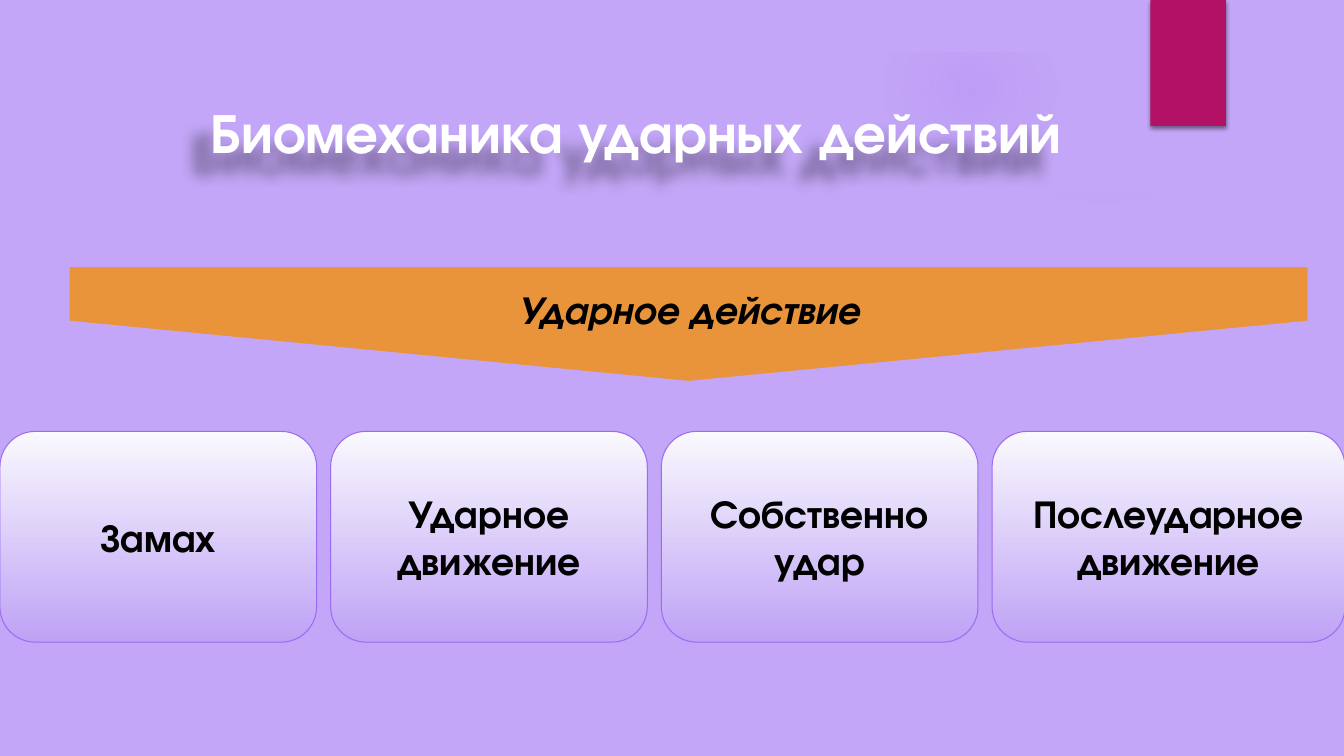
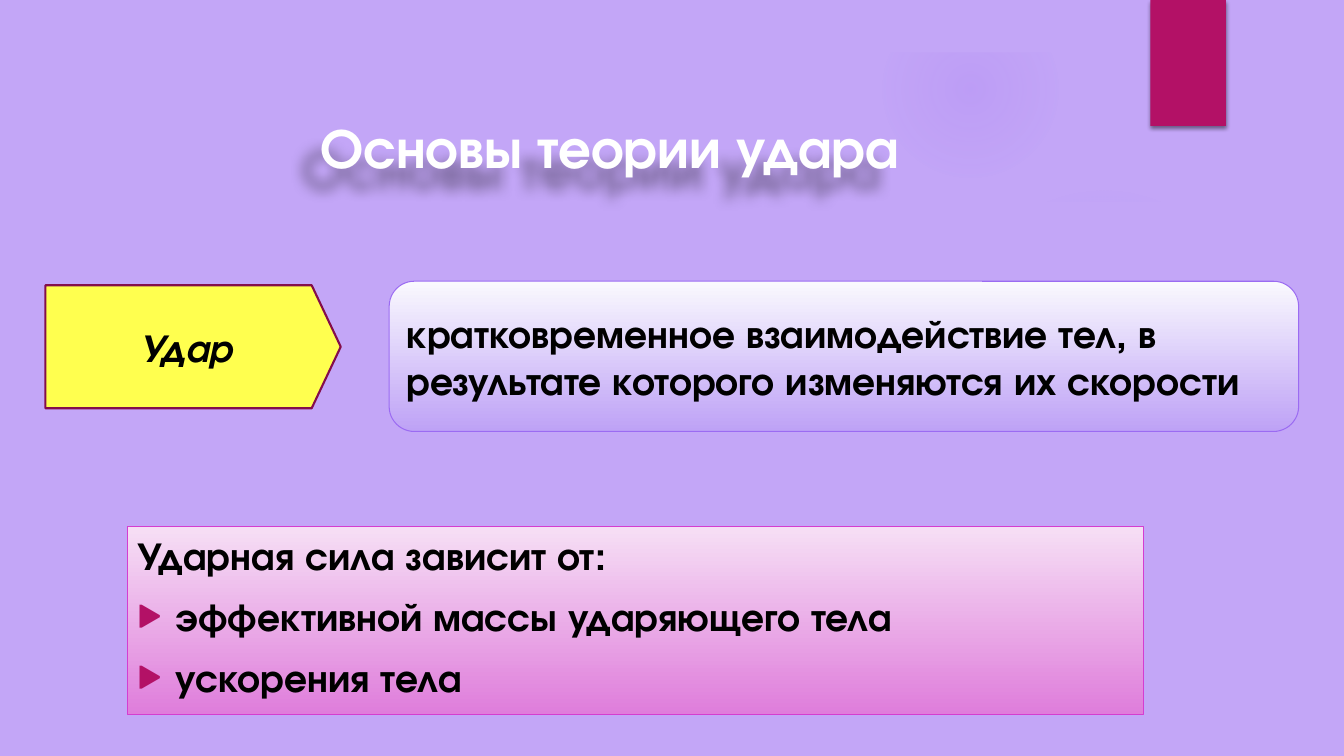
from lxml import etree
from pptx import Presentation
from pptx.dml.color import RGBColor
from pptx.enum.shapes import MSO_SHAPE
from pptx.enum.text import MSO_ANCHOR, MSO_AUTO_SIZE, PP_ALIGN
from pptx.oxml import parse_xml
from pptx.oxml.ns import nsdecls, qn
from pptx.util import Inches, Pt

RECT, ROUNDED = MSO_SHAPE.RECTANGLE, MSO_SHAPE.ROUNDED_RECTANGLE
PENTAGON, OVAL = MSO_SHAPE.PENTAGON, MSO_SHAPE.OVAL
MIDDLE, TOP = MSO_ANCHOR.MIDDLE, MSO_ANCHOR.TOP
CENTER, LEFT = PP_ALIGN.CENTER, PP_ALIGN.LEFT

LILAC = RGBColor(0xC3, 0xA6, 0xF7)
VIOLET = RGBColor(0x9B, 0x6B, 0xF2)
CARD_TOP = RGBColor(0xFA, 0xF9, 0xFE)
CARD_BOTTOM = RGBColor(0xBE, 0xA2, 0xF6)
PINK_TOP = RGBColor(0xF6, 0xDF, 0xF5)
PINK_BOTTOM = RGBColor(0xDF, 0x7D, 0xDB)
MAGENTA = RGBColor(0xD5, 0x3D, 0xD0)
CRIMSON = RGBColor(0xB3, 0x11, 0x66)
WINE = RGBColor(0x84, 0x0D, 0x4B)
ORANGE = RGBColor(0xE9, 0x94, 0x3A)
YELLOW = RGBColor(0xFF, 0xFF, 0x4F)
WHITE = RGBColor(0xFF, 0xFF, 0xFF)
BLACK = RGBColor(0, 0, 0)

FACE = "TeX Gyre Adventor"
BODY_FONT = {"name": FACE, "size": Pt(28), "bold": True, "italic": False}
TERM_FONT = {**BODY_FONT, "italic": True}
TITLE_FONT = {**BODY_FONT, "size": Pt(40)}

CARD_STYLE = {"fill": (CARD_TOP, CARD_BOTTOM), "line": VIOLET, "weight": 0.75}
PINK_STYLE = {"fill": (PINK_TOP, PINK_BOTTOM), "line": MAGENTA, "weight": 0.75}
BANNER_STYLE = {"fill": (ORANGE,), "line": LILAC, "weight": 2.25}
TERM_STYLE = {"fill": (YELLOW,), "line": WINE, "weight": 1.5}
PLAIN_STYLE = {"fill": (LILAC,)}
RIBBON_STYLE = {"fill": (CRIMSON,)}

PHASES_TITLE = "Биомеханика ударных действий"
ACTION = "Ударное действие"
PHASES = ["Замах", "Ударное движение", "Собственно удар", "Послеударное движение"]
PHASE_WIDTHS = [3.14, 3.14, 3.14, 3.5]
PHASE_GAP = 0.14

THEORY_TITLE = "Основы теории удара"
TERM = "Удар"
DEFINITION = ("кратковременное взаимодействие тел, "
              "в результате которого изменяются их скорости")
FORCE_LEAD = "Ударная сила зависит от:"
FORCE_FACTORS = ["эффективной массы ударяющего тела", "ускорения тела"]

# left, top, diameter, then (position, opacity) stops in percent
GLOWS = [
    (9.41, 1.83, 3.08, [(0, 7), (36, 6), (69, 0)]),
    (8.75, 0.01, 1.75, [(0, 14), (36, 7), (73, 0)]),
]
SWOOSH = [(9.34, 2.5), (10.6, 2.46), (11.8, 2.31), (12.89, 2.14), (12.83, 1.66),
          (12.02, 1.91), (11.09, 2.14), (10.2, 2.3), (9.3, 2.43)]
PANEL = [(0.5, 2.04), (2.16, 2.24), (4.01, 2.38), (6.07, 2.47), (7.6, 2.47),
         (9.49, 2.41), (10.32, 2.35), (11.16, 2.27), (12, 2.17), (12.84, 2.04),
         (12.84, 7), (0.5, 7)]


def place(shape, left, top, width, height):
    shape.left, shape.top = Inches(left), Inches(top)
    shape.width, shape.height = Inches(width), Inches(height)


def paint(shape, fill, line=None, weight=0):
    """One fill colour is solid, two run from top to bottom."""
    if len(fill) == 1:
        shape.fill.solid()
        shape.fill.fore_color.rgb = fill[0]
    else:
        shape.fill.gradient()
        shape.fill.gradient_angle = 270
        for stop, colour in zip(shape.fill.gradient_stops, fill):
            stop.color.rgb = colour
    if line is None:
        shape.line.fill.background()
    else:
        shape.line.color.rgb = line
        shape.line.width = Pt(weight)
    shape.shadow.inherit = False


def cast_shadow(shape, blur, distance, angle, opacity):
    shape.shadow.inherit = False
    effects = shape.element.spPr.find(qn("a:effectLst"))
    effects.append(parse_xml(
        f'<a:outerShdw {nsdecls("a")} blurRad="{Pt(blur)}" dist="{Pt(distance)}" '
        f'dir="{angle * 60000}" algn="ctr" rotWithShape="0"><a:srgbClr val="{BLACK}">'
        f'<a:alpha val="{opacity * 1000}"/></a:srgbClr></a:outerShdw>'))


def write(shape, lines, font, colour=BLACK, align=CENTER, anchor=MIDDLE):
    frame = shape.text_frame
    frame.word_wrap = True
    frame.auto_size = MSO_AUTO_SIZE.NONE
    frame.vertical_anchor = anchor
    frame.text = "\n".join(lines)
    for paragraph in frame.paragraphs:
        paragraph.alignment = align
        run_font = paragraph.runs[0].font
        for key, value in font.items():
            setattr(run_font, key, value)
        run_font.color.rgb = colour


def add_box(slide, kind, box, style, adjust=None):
    shape = slide.shapes.add_shape(kind, *map(Inches, box))
    paint(shape, **style)
    if adjust is not None:
        shape.adjustments[0] = adjust
    return shape


def add_outline(slide, points):
    builder = slide.shapes.build_freeform(*points[0], scale=Inches(1))
    builder.add_line_segments(points[1:], close=True)
    shape = builder.convert_to_shape()
    paint(shape, **PLAIN_STYLE)
    return shape


def add_glow(slide, left, top, size, stops):
    glow = add_box(slide, OVAL, (left, top, size, size), PLAIN_STYLE)
    stop_xml = "".join(
        f'<a:gs pos="{position * 1000}"><a:srgbClr val="{VIOLET}">'
        f'<a:alpha val="{opacity * 1000}"/></a:srgbClr></a:gs>'
        for position, opacity in stops)
    properties = glow.element.spPr
    properties.replace(properties.find(qn("a:solidFill")), parse_xml(
        f'<a:gradFill {nsdecls("a")}><a:gsLst>{stop_xml}</a:gsLst><a:path path="circle">'
        '<a:fillToRect l="50000" t="50000" r="50000" b="50000"/></a:path></a:gradFill>'))
    return glow


def decorate_master(master, slide):
    """Draw the backdrop on a slide, then move it under the master's placeholders."""
    master.background.fill.solid()
    master.background.fill.fore_color.rgb = LILAC
    glows = [add_glow(slide, *glow) for glow in GLOWS]
    swoosh = add_outline(slide, SWOOSH)
    swoosh.rotation = 350.2
    swoosh_colour = swoosh.element.spPr.find(qn("a:solidFill"))[0]
    etree.SubElement(swoosh_colour, qn("a:alpha"), val="20000")
    panel = add_outline(slide, PANEL)
    top_band = add_box(slide, RECT, (0, 0, 13.33, 0.52), PLAIN_STYLE)
    ribbon = add_box(slide, RECT, (11.41, 0, 0.75, 1.25), RIBBON_STYLE)
    cast_shadow(ribbon, 3, 2, 90, 45)
    tree = master.shapes.element if hasattr(master.shapes, "element") else master.element.cSld.spTree
    for order, part in enumerate([*glows, swoosh, panel, top_band, ribbon]):
        part.element.nvSpPr.cNvPr.set("id", str(100 + order))
        tree.insert(2 + order, part.element)


def set_title(slide, text, box):
    title = slide.shapes.title
    place(title, *box)
    write(title, [text], TITLE_FONT, WHITE)
    cast_shadow(title, 10, 20, 135, 40)


def set_bullets(paragraph):
    properties = paragraph._p.get_or_add_pPr()
    properties.set("marL", str(Inches(0.38)))
    properties.set("indent", str(-Inches(0.38)))
    colour = etree.SubElement(properties, qn("a:buClr"))
    etree.SubElement(colour, qn("a:srgbClr"), val=str(CRIMSON))
    etree.SubElement(properties, qn("a:buSzPct"), val="80000")
    etree.SubElement(properties, qn("a:buFont"), typeface=FACE)
    etree.SubElement(properties, qn("a:buChar"), char="▶")
    paragraph.space_before = Pt(10)


def build_phases(slide):
    set_title(slide, PHASES_TITLE, (1.16, 1.05, 10.3, 0.51))
    banner = add_box(slide, PENTAGON, (6.25, -2.94, 1.16, 12.31), BANNER_STYLE, 0.516)
    banner.rotation = 90
    write(banner, [ACTION], TERM_FONT)
    banner.text_frame._txBody.bodyPr.set("vert", "vert270")
    left = 0
    for phase, width in zip(PHASES, PHASE_WIDTHS):
        card = add_box(slide, ROUNDED, (left, 4.28, width, 2.09), CARD_STYLE)
        write(card, [phase], BODY_FONT)
        left += width + PHASE_GAP


def build_theory(slide):
    set_title(slide, THEORY_TITLE, (1.26, 1.06, 9.58, 0.77))
    force = slide.placeholders[1]
    place(force, 1.26, 5.22, 10.08, 1.87)
    paint(force, **PINK_STYLE)
    write(force, [FORCE_LEAD, *FORCE_FACTORS], BODY_FONT, align=LEFT, anchor=TOP)
    lead, *factors = force.text_frame.paragraphs
    lead_properties = lead._p.get_or_add_pPr()
    for key in ("marL", "indent"):
        lead_properties.set(key, "0")
    etree.SubElement(lead_properties, qn("a:buNone"))
    lead.space_before = Pt(0)
    for factor in factors:
        set_bullets(factor)
    term = add_box(slide, PENTAGON, (0.45, 2.83, 2.93, 1.22), TERM_STYLE, 0.236)
    write(term, [TERM], TERM_FONT)
    definition = add_box(slide, ROUNDED, (3.86, 2.79, 9.02, 1.49), CARD_STYLE)
    write(definition, [DEFINITION], BODY_FONT, align=LEFT)


def main():
    deck = Presentation()
    deck.slide_width, deck.slide_height = Inches(13.33), Inches(7.5)
    title_only, title_and_body = deck.slide_layouts[5], deck.slide_layouts[1]
    phases = deck.slides.add_slide(title_only)
    decorate_master(deck.slide_master, phases)
    build_phases(phases)
    build_theory(deck.slides.add_slide(title_and_body))
    deck.save("out.pptx")


if __name__ == "__main__":
    main()
